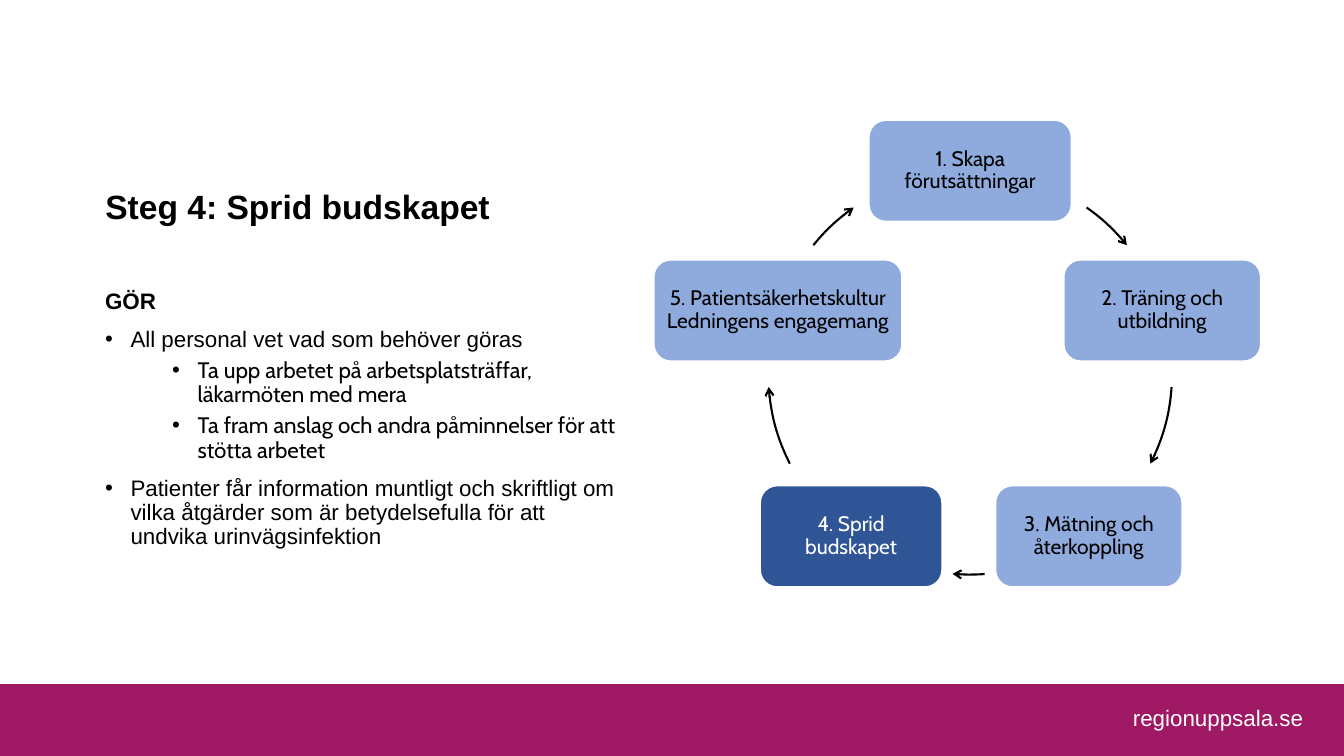
"""Build the slide on step 4, spreading the message, with its five-step cycle."""
import lxml.etree
import pptx
import pptx.dml.color
import pptx.enum.shapes
import pptx.enum.text
import pptx.oxml.ns
import pptx.util

Cm = pptx.util.Cm
Pt = pptx.util.Pt
RGBColor = pptx.dml.color.RGBColor
PP_ALIGN = pptx.enum.text.PP_ALIGN
MSO_ANCHOR = pptx.enum.text.MSO_ANCHOR
MSO_SHAPE = pptx.enum.shapes.MSO_SHAPE
qn = pptx.oxml.ns.qn

BLACK = RGBColor(0x00, 0x00, 0x00)
WHITE = RGBColor(0xFF, 0xFF, 0xFF)
MAGENTA = RGBColor(0x9E, 0x18, 0x63)
LIGHT_BLUE = RGBColor(0x8F, 0xAA, 0xDC)
DARK_BLUE = RGBColor(0x2F, 0x55, 0x97)


def write_text(para, text, size=16, font="Arial", color=BLACK, bold=False,
               align=PP_ALIGN.LEFT, spacing=0.9, before=0, bullet_left=None):
    """Write one formatted paragraph, with a bullet if bullet_left is given."""
    if bullet_left is not None:
        properties = para._p.get_or_add_pPr()
        properties.set("marL", str(Cm(bullet_left)))
        properties.set("indent", str(-Cm(0.64)))
        lxml.etree.SubElement(properties, qn("a:buFont")).set("typeface", "Arial")
        lxml.etree.SubElement(properties, qn("a:buChar")).set("char", "•")
    para.alignment = align
    para.line_spacing = spacing
    para.space_before = Pt(before)
    span = para.add_run()
    span.text = text
    span.font.size = Pt(size)
    span.font.name = font
    span.font.bold = bold
    span.font.color.rgb = color


deck = pptx.Presentation()
deck.slide_width = Cm(33.87)
deck.slide_height = Cm(19.05)
page = deck.slides.add_slide(deck.slide_layouts[5])
shapes = page.shapes

bar = shapes.add_shape(MSO_SHAPE.RECTANGLE, 0, Cm(17.24), deck.slide_width, Cm(1.81))
bar.shadow.inherit = False
bar.fill.solid()
bar.fill.fore_color.rgb = MAGENTA
bar.line.fill.background()

footer = shapes.add_textbox(Cm(27.94), Cm(17.24), Cm(5.51), Cm(1.69))
footer.text_frame.word_wrap = True
footer.text_frame.vertical_anchor = MSO_ANCHOR.MIDDLE
write_text(footer.text_frame.paragraphs[0], "regionuppsala.se", color=WHITE,
           align=PP_ALIGN.CENTER, spacing=1.0)

title = shapes.title
title.left, title.top, title.width, title.height = Cm(2.4), Cm(4.67), Cm(14.38), Cm(1.52)
title.text_frame.auto_size = pptx.enum.text.MSO_AUTO_SIZE.NONE
title.text_frame.vertical_anchor = MSO_ANCHOR.TOP
write_text(title.text_frame.paragraphs[0], "Steg 4: Sprid budskapet", size=24, bold=True)

body = shapes.add_textbox(Cm(2.4), Cm(7.18), Cm(13.49), Cm(7.77))
body.text_frame.word_wrap = True
write_text(body.text_frame.paragraphs[0], "GÖR", bold=True)
main_point = {"before": 10, "bullet_left": 0.64}
sub_point = {"before": 5, "bullet_left": 2.33, "font": "Cabin"}
points = [
    ("All personal vet vad som behöver göras", main_point),
    ("Ta upp arbetet på arbetsplatsträffar, läkarmöten med mera", sub_point),
    ("Ta fram anslag och andra påminnelser för att stötta arbetet", sub_point),
    ("Patienter får information muntligt och skriftligt om vilka åtgärder "
     "som är betydelsefulla för att undvika urinvägsinfektion", main_point),
]
for text, style in points:
    write_text(body.text_frame.add_paragraph(), text, **style)

steps = [
    ("1. Skapa förutsättningar", 21.9, 3.03, 5.1, LIGHT_BLUE, BLACK),
    ("2. Träning och utbildning", 26.81, 6.55, 4.96, LIGHT_BLUE, BLACK),
    ("3. Mätning och återkoppling", 25.09, 12.24, 4.7, LIGHT_BLUE, BLACK),
    ("4. Sprid budskapet", 19.16, 12.24, 4.58, DARK_BLUE, WHITE),
    ("5. Patientsäkerhetskultur Ledningens engagemang", 16.48, 6.55, 6.25, LIGHT_BLUE, BLACK),
]
for text, left, top, width, fill, color in steps:
    box = shapes.add_shape(MSO_SHAPE.ROUNDED_RECTANGLE, Cm(left), Cm(top), Cm(width), Cm(2.55))
    box.shadow.inherit = False
    box.fill.solid()
    box.fill.fore_color.rgb = fill
    box.line.color.rgb = WHITE
    box.line.width = Pt(1)
    frame = box.text_frame
    frame.word_wrap = True
    frame.vertical_anchor = MSO_ANCHOR.MIDDLE
    frame.margin_left = frame.margin_right = Cm(0.15)
    frame.margin_top = frame.margin_bottom = Cm(0.15)
    write_text(frame.paragraphs[0], text, size=15, font="Cabin", color=color,
               align=PP_ALIGN.CENTER)

CYCLE_LEFT, CYCLE_TOP, CYCLE_SIZE = Cm(19.36), Cm(4.3), Cm(10.18)
ADJUSTMENT_PER_DEGREE = 0.6
arcs = [(-54.8, -39.1), (4.1, 26.8), (85.9, 95), (153.2, 175.9), (-140.9, -125.2)]
for angles in arcs:
    arrow = shapes.add_shape(MSO_SHAPE.ARC, CYCLE_LEFT, CYCLE_TOP, CYCLE_SIZE, CYCLE_SIZE)
    for index, angle in enumerate(angles):
        arrow.adjustments[index] = angle % 360 * ADJUSTMENT_PER_DEGREE
    arrow.shadow.inherit = False
    arrow.fill.background()
    arrow.line.color.rgb = BLACK
    arrow.line.width = Pt(1.5)
    outline = arrow.element.spPr.find(qn("a:ln"))
    lxml.etree.SubElement(outline, qn("a:tailEnd")).set("type", "arrow")

deck.save("out.pptx")
